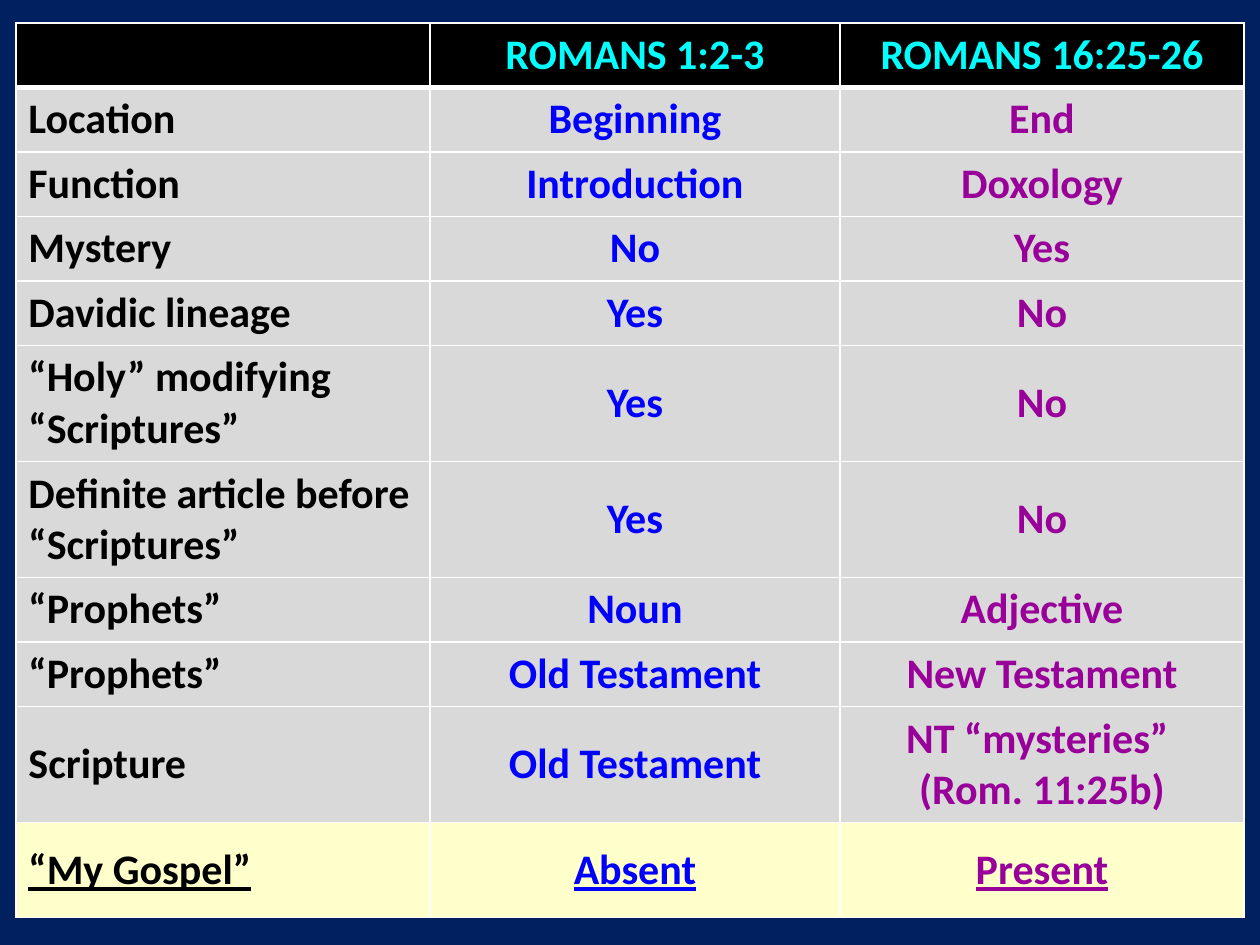
from lxml import etree
from pptx import Presentation
from pptx.dml.color import RGBColor
from pptx.enum.text import MSO_ANCHOR, PP_ALIGN
from pptx.oxml.ns import qn
from pptx.util import Cm, Pt

LEFT, MID = PP_ALIGN.LEFT, PP_ALIGN.CENTER
TOP, CENTER = MSO_ANCHOR.TOP, MSO_ANCHOR.MIDDLE


def paint(fill, color):
    fill.solid()
    fill.fore_color.rgb = RGBColor.from_string(color)


def write(cell, text, color, align, line=None):
    for i, part in enumerate(text.split("\n")):
        para = cell.text_frame.paragraphs[0] if i == 0 else cell.text_frame.add_paragraph()
        para.alignment = align
        if not part:
            continue
        run = para.add_run()
        run.text = part
        font = run.font
        font.name, font.size, font.bold, font.underline = "Calibri", Pt(24), True, line
        paint(font.fill, color)


ROWS = [
    ("", "ROMANS 1:2-3", "ROMANS 16:25-26"),
    ("Location", "Beginning", "End"),
    ("Function", "Introduction", "Doxology"),
    ("Mystery", "No", "Yes"),
    ("Davidic lineage", "Yes", "No"),
    ("“Holy” modifying “Scriptures”", "Yes", "No"),
    ("Definite article before “Scriptures”", "Yes", "No"),
    ("“Prophets”", "Noun", "Adjective"),
    ("“Prophets”", "Old Testament", "New Testament"),
    ("Scripture", "Old Testament", "NT “mysteries” \n(Rom. 11:25b)"),
    ("“My Gospel”", "Absent", "Present"),
]
LAST = len(ROWS) - 1
WIDTHS = [8.35, 8.26, 8.15]
HEIGHTS = [1.3] * 5 + [2.34] * 2 + [1.3] * 2 + [2.34, 1.92]
INKS = ["000000", "0000FF", "990099"]

prs = Presentation()
prs.slide_width, prs.slide_height = Cm(25.4), Cm(19.05)
slide = prs.slides.add_slide(prs.slide_layouts[6])
paint(slide.background.fill, "002060")

table = slide.shapes.add_table(
    len(ROWS), len(WIDTHS), Cm(0.32), Cm(0.46), Cm(sum(WIDTHS)), Cm(sum(HEIGHTS))
).table
for col, width in zip(table.columns, WIDTHS):
    col.width = Cm(width)

for r, (row, height) in enumerate(zip(ROWS, HEIGHTS)):
    table.rows[r].height = Cm(height)
    head, end = r == 0, r == LAST
    back = "000000" if head else "FFFFCC" if end else "D9D9D9"
    for c, text in enumerate(row):
        cell = table.cell(r, c)
        cell.vertical_anchor = TOP if head else CENTER
        props = cell._tc.get_or_add_tcPr()
        for side in "LRTB":
            thick = (head and side == "B") or (r == 1 and side == "T")
            edge = etree.SubElement(props, qn(f"a:ln{side}"), w=str(Pt(3 if thick else 1)))
            solid = etree.SubElement(edge, qn("a:solidFill"))
            etree.SubElement(solid, qn("a:srgbClr"), val="FFFFFF")
        paint(cell.fill, back)
        write(cell, text, "00FFFF" if head else INKS[c], MID if c else LEFT, line=end)

prs.save("out.pptx")
